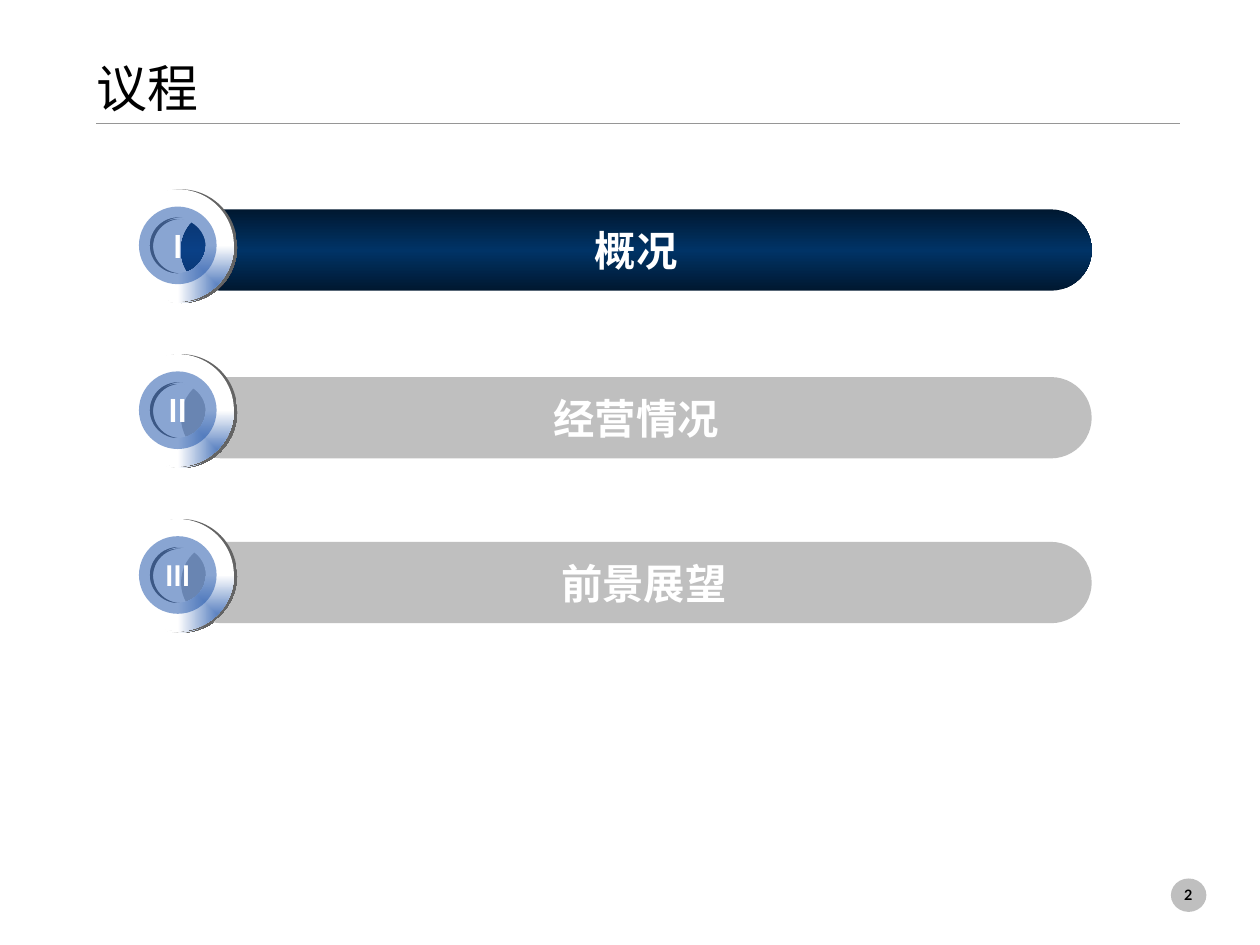
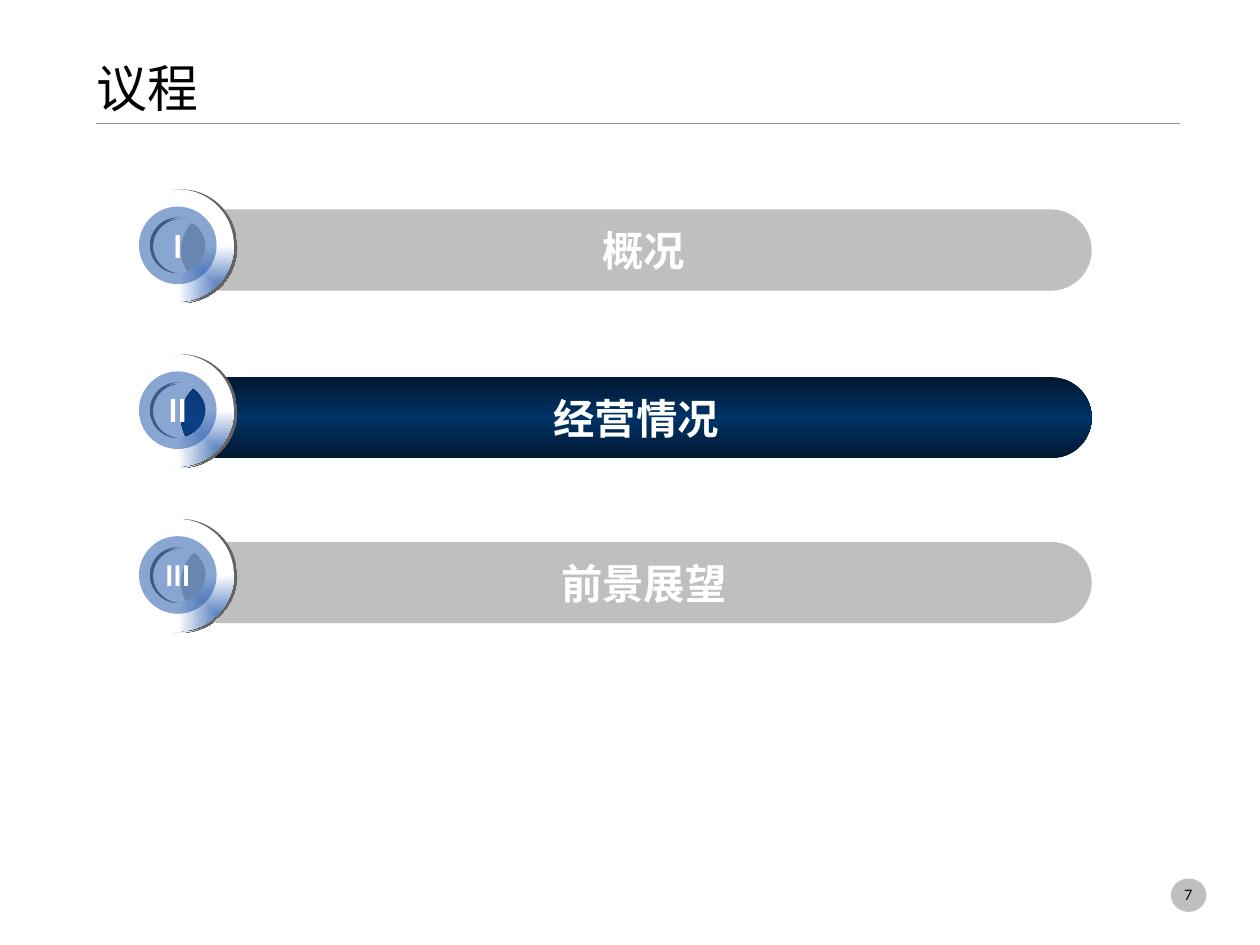
"""Build two agenda slides that each highlight one section."""

from dataclasses import dataclass

import lxml.etree
import pptx
import pptx.dml.color
import pptx.enum.shapes
import pptx.enum.text
import pptx.oxml
import pptx.oxml.ns
import pptx.util

Pt = pptx.util.Pt
RGBColor = pptx.dml.color.RGBColor
MSO_SHAPE = pptx.enum.shapes.MSO_SHAPE
PP_ALIGN = pptx.enum.text.PP_ALIGN
MSO_ANCHOR = pptx.enum.text.MSO_ANCHOR

BLACK = RGBColor(0x00, 0x00, 0x00)
WHITE = RGBColor(0xFF, 0xFF, 0xFF)
GREY = RGBColor(0xBF, 0xBF, 0xBF)
RULE_GREY = RGBColor(0x96, 0x96, 0x96)
SHADOW_GREY = RGBColor(0x64, 0x64, 0x64)
NAVY = RGBColor(0x00, 0x33, 0x66)
DARK_NAVY = RGBColor(0x00, 0x18, 0x30)
BLUE = RGBColor(0x15, 0x4D, 0xA7)

BODY_FONT = "Lato"
MARGIN_LEFT = 60.5
CONTENT_WIDTH = 681
BAR_LEFT, BAR_WIDTH, BAR_HEIGHT = 113.8, 572.4, 51.1
BAR_INDENT = 9.4
RING_LEFT, RING_TOP, RING_SIZE = 76.5, 119, 70.5
RING_PITCH = 103.6
DISC_SIZE = 48.8

DOWNWARD = '<a:lin ang="5400000" scaled="1"/>'
FROM_CORNER = '<a:path path="rect"><a:fillToRect l="100000" t="100000"/></a:path>'


@dataclass(frozen=True)
class Section:
    """One agenda entry with its numeral and bar."""

    numeral: str
    name: str
    bar_top: float
    numeral_size: float = 20
    bar_between_rings: bool = False


@dataclass(frozen=True)
class Agenda:
    """One agenda slide."""

    page: str
    current: str
    indented: tuple[str, ...]
    title_font: str
    bold_page: bool


SECTIONS = (
    Section("I", "概况", 131.6),
    Section("II", "经营情况", 237),
    Section("III", "前景展望", 340.6, numeral_size=18, bar_between_rings=True),
)

AGENDAS = (
    Agenda("2", "概况", ("前景展望",), "Lato", True),
    Agenda("7", "经营情况", ("概况", "前景展望"), "Roboto", False),
)


def write_text(shape, text: str, *, size: float, color: RGBColor = WHITE,
               font: str = BODY_FONT, bold: bool = False, align=PP_ALIGN.CENTER,
               anchor=MSO_ANCHOR.MIDDLE, wrap: bool = False,
               inset: tuple[float, float] = (7.2, 3.6), indent: float = 0) -> None:
    """Write one formatted paragraph into a shape."""
    frame = shape.text_frame
    frame.auto_size = pptx.enum.text.MSO_AUTO_SIZE.NONE
    frame.word_wrap = wrap
    frame.vertical_anchor = anchor
    frame.margin_left = frame.margin_right = Pt(inset[0])
    frame.margin_top = frame.margin_bottom = Pt(inset[1])
    paragraph = frame.paragraphs[0]
    paragraph.alignment = align
    if indent:
        properties = paragraph._p.get_or_add_pPr()
        properties.set("marL", str(Pt(indent)))
        properties.set("indent", "0")
    run = paragraph.add_run()
    run.text = text
    run.font.name = font
    run.font.size = Pt(size)
    run.font.bold = bold
    run.font.color.rgb = color


def add_plain(slide, kind, left: float, top: float, width: float, height: float,
              fill: RGBColor | None = None):
    """Add a preset shape without outline or shadow."""
    shape = slide.shapes.add_shape(kind, Pt(left), Pt(top), Pt(width), Pt(height))
    shape.shadow.inherit = False
    shape.line.fill.background()
    if fill is not None:
        shape.fill.solid()
        shape.fill.fore_color.rgb = fill
    return shape


def fill_gradient(shape, colors: tuple[RGBColor, ...], direction: str) -> None:
    """Fill a shape with evenly spaced gradient stops."""
    step = 100000 // (len(colors) - 1)
    stops = "".join(
        f'<a:gs pos="{index * step}"><a:srgbClr val="{color}"/></a:gs>'
        for index, color in enumerate(colors)
    )
    gradient = pptx.oxml.parse_xml(
        f'<a:gradFill {pptx.oxml.ns.nsdecls("a")} rotWithShape="1">'
        f"<a:gsLst>{stops}</a:gsLst>{direction}</a:gradFill>"
    )
    shape.element.spPr.find(pptx.oxml.ns.qn("a:prstGeom")).addnext(gradient)


def add_ring(slide, top: float) -> None:
    """Add a shaded ring with a hard shadow on its right."""
    ring = add_plain(slide, MSO_SHAPE.DONUT, RING_LEFT, top, RING_SIZE, RING_SIZE)
    ring.adjustments[0] = 0.25
    fill_gradient(ring, (BLUE, WHITE), FROM_CORNER)
    effects = ring.element.spPr.find(pptx.oxml.ns.qn("a:effectLst"))
    effects.append(pptx.oxml.parse_xml(
        f'<a:outerShdw {pptx.oxml.ns.nsdecls("a")} blurRad="0" dist="{Pt(2)}" dir="0" '
        f'algn="ctr" rotWithShape="0"><a:srgbClr val="{SHADOW_GREY}"/></a:outerShdw>'
    ))


def add_bar(slide, section: Section, agenda: Agenda) -> None:
    """Add the section bar, highlighted when it is current."""
    is_current = section.name == agenda.current
    bar = add_plain(slide, MSO_SHAPE.ROUNDED_RECTANGLE, BAR_LEFT, section.bar_top,
                    BAR_WIDTH, BAR_HEIGHT, None if is_current else GREY)
    bar.adjustments[0] = 0.5
    if is_current:
        fill_gradient(bar, (DARK_NAVY, NAVY, DARK_NAVY), DOWNWARD)
    write_text(bar, section.name, size=26, bold=True,
               indent=BAR_INDENT if section.name in agenda.indented else 0)


def add_disc(slide, section: Section, ring_top: float) -> None:
    """Add the translucent disc that carries the numeral."""
    offset = (RING_SIZE - DISC_SIZE) / 2
    disc = add_plain(slide, MSO_SHAPE.OVAL, RING_LEFT + offset, ring_top + offset,
                     DISC_SIZE, DISC_SIZE, BLUE)
    color = disc.element.spPr.find(
        f'{pptx.oxml.ns.qn("a:solidFill")}/{pptx.oxml.ns.qn("a:srgbClr")}')
    lxml.etree.SubElement(color, pptx.oxml.ns.qn("a:alpha"), val="50000")
    write_text(disc, section.numeral, size=section.numeral_size, bold=True)


def add_frame(slide, agenda: Agenda) -> None:
    """Add the title, its rule and the page number."""
    title = slide.shapes.title
    title.left, title.top = Pt(MARGIN_LEFT), Pt(0)
    title.width, title.height = Pt(CONTENT_WIDTH), Pt(74.2)
    write_text(title, "议程", size=32, color=BLACK, font=agenda.title_font,
               align=PP_ALIGN.LEFT, anchor=MSO_ANCHOR.BOTTOM, wrap=True, inset=(0, 0))

    rule = slide.shapes.add_connector(
        pptx.enum.shapes.MSO_CONNECTOR.STRAIGHT, Pt(MARGIN_LEFT), Pt(77.6),
        Pt(MARGIN_LEFT + CONTENT_WIDTH), Pt(77.6))
    rule.line.color.rgb = RULE_GREY
    rule.line.width = Pt(0.75)
    lxml.etree.SubElement(rule.element.spPr, pptx.oxml.ns.qn("a:effectLst"))

    add_plain(slide, MSO_SHAPE.OVAL, 736, 552.2, 22.3, 21, GREY)
    page = slide.shapes.add_textbox(Pt(717.1), Pt(538), Pt(32.4), Pt(30))
    write_text(page, agenda.page, size=9, color=BLACK, bold=agenda.bold_page,
               align=PP_ALIGN.RIGHT, anchor=MSO_ANCHOR.BOTTOM, wrap=True, inset=(0, 0))


def add_agenda(deck, agenda: Agenda) -> None:
    """Add one complete agenda slide."""
    slide = deck.slides.add_slide(deck.slide_layouts[5])
    add_frame(slide, agenda)
    for section in SECTIONS:
        if not section.bar_between_rings:
            add_bar(slide, section, agenda)
    for index, section in enumerate(SECTIONS):
        ring_top = RING_TOP + index * RING_PITCH
        add_ring(slide, ring_top + 1)
        if section.bar_between_rings:
            add_bar(slide, section, agenda)
        add_ring(slide, ring_top)
        add_disc(slide, section, ring_top)


def main() -> None:
    """Build and save the deck."""
    deck = pptx.Presentation()
    deck.slide_width, deck.slide_height = Pt(792), Pt(594)
    for agenda in AGENDAS:
        add_agenda(deck, agenda)
    deck.save("out.pptx")


if __name__ == "__main__":
    main()
